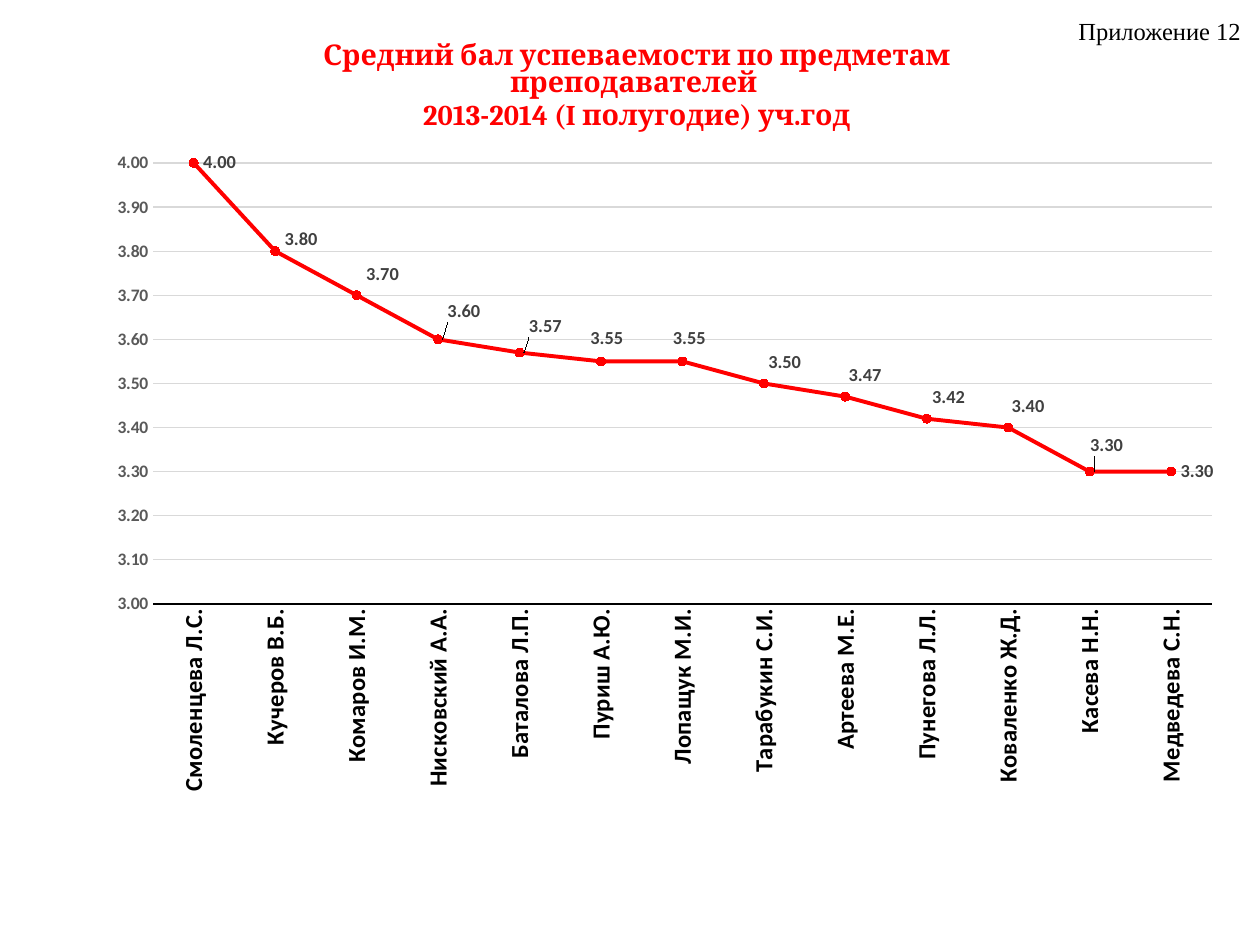
from lxml.etree import SubElement
from pptx import Presentation
from pptx.chart.data import CategoryChartData
from pptx.dml.color import RGBColor
from pptx.enum.chart import XL_CHART_TYPE, XL_LABEL_POSITION, XL_MARKER_STYLE, XL_TICK_MARK
from pptx.enum.dml import MSO_FILL
from pptx.enum.text import MSO_ANCHOR, MSO_AUTO_SIZE, PP_ALIGN
from pptx.oxml import parse_xml
from pptx.oxml.ns import nsdecls, qn
from pptx.util import Emu, Pt

LINE_MARKERS = XL_CHART_TYPE.LINE_MARKERS
RIGHT = XL_LABEL_POSITION.RIGHT
CIRCLE = XL_MARKER_STYLE.CIRCLE
NO_TICK = XL_TICK_MARK.NONE
TOP = MSO_ANCHOR.TOP
CENTER = PP_ALIGN.CENTER
FIT_SHAPE = MSO_AUTO_SIZE.SHAPE_TO_FIT_TEXT
NO_FIT = MSO_AUTO_SIZE.NONE

RED = RGBColor(0xFF, 0x00, 0x00)
BLACK = RGBColor(0x00, 0x00, 0x00)
AXIS_GRAY = RGBColor(0x59, 0x59, 0x59)
LABEL_GRAY = RGBColor(0x40, 0x40, 0x40)
GRID_GRAY = RGBColor(0xD9, 0xD9, 0xD9)

PX_PER_INCH = 126
PAGE_SIZE = (1260, 945)
TITLE_BOX = (203, 37, 862, 102)
NOTE_BOX = (1066, 10, 189, 43)
CHART_BOX = (94, 140, 1142, 665)
PLOT_BOX = (59, 23, 1059, 441)

TITLE_LINES = (
    "Средний бал успеваемости по предметам преподавателей ",
    "2013-2014 (I полугодие) уч.год",
)
GRADES = {
    "Смоленцева Л.С.": 4, "Кучеров В.Б.": 3.8, "Комаров И.М.": 3.7,
    "Нисковский А.А.": 3.6, "Баталова Л.П.": 3.57, "Пуриш А.Ю.": 3.55,
    "Лопащук М.И.": 3.55, "Тарабукин С.И.": 3.5, "Артеева М.Е.": 3.47,
    "Пунегова Л.Л.": 3.42, "Коваленко Ж.Д.": 3.4, "Касева Н.Н.": 3.3,
    "Медведева С.Н.": 3.3,
}
LABEL_SHIFTS = {
    1: (0, -12), 2: (0, -21), 3: (0, -28), 4: (0, -26), 5: (-20, -23), 6: (-19, -23),
    7: (-5, -21), 8: (-6, -21), 9: (-4, -21), 10: (-6, -21), 11: (-9, -26),
}
NUMBER_FORMAT = "0.00"

TITLE_FONT = {"name": "Cambria", "size": Pt(16.3), "bold": True, "color": RED}
NOTE_FONT = {"name": "Times New Roman", "size": Pt(14), "color": BLACK}
CHART_FONT = {"name": "Calibri", "size": Pt(10), "color": BLACK}
CATEGORY_FONT = {"name": "Calibri", "size": Pt(14), "bold": True, "color": BLACK}
VALUE_FONT = {"name": "Calibri", "size": Pt(10), "bold": True, "color": AXIS_GRAY}
LABEL_FONT = {"name": "Calibri", "size": Pt(10.5), "bold": True, "color": LABEL_GRAY}


def px(length):
    """Turn px into EMU."""
    return Emu(round(length * 914400 / PX_PER_INCH))


def set_attributes(target, values):
    """Set each attribute of the target from a dict."""
    for name, value in values.items():
        setattr(target, name, value)


def style_font(font, values):
    """Apply a dict of font values, with its colour."""
    set_attributes(font, {name: value for name, value in values.items() if name != "color"})
    font.color.rgb = values["color"]


def style_line(line, color, width):
    """Give a line a solid colour and a width in points."""
    line.color.rgb = color
    line.width = Pt(width)


def manual_layout(values):
    """Build a chart layout element from its named parts."""
    layout = parse_xml(f"<c:layout {nsdecls('c')}/>")
    manual = SubElement(layout, qn("c:manualLayout"))
    for name, value in values.items():
        SubElement(manual, qn(f"c:{name}")).set("val", str(value))
    return layout


def add_title(page, box):
    """Place the two-paragraph heading in the title placeholder."""
    title = page.shapes.title
    set_attributes(title, dict(zip(("left", "top", "width", "height"), map(px, box))))
    frame = title.text_frame
    set_attributes(frame, {"word_wrap": True, "auto_size": NO_FIT, "vertical_anchor": TOP})
    for index, line in enumerate(TITLE_LINES):
        para = frame.add_paragraph() if index else frame.paragraphs[0]
        set_attributes(para, {"alignment": CENTER, "line_spacing": 0.8,
                              "space_before": Pt(3 if index else 0)})
        para._p.get_or_add_pPr().set("marL", str(px(6)))
        span = para.add_run()
        span.text = line
        style_font(span.font, TITLE_FONT)


def add_note(page, box):
    """Place the appendix number."""
    frame = page.shapes.add_textbox(*map(px, box)).text_frame
    set_attributes(frame, {"word_wrap": False, "auto_size": FIT_SHAPE})
    span = frame.paragraphs[0].add_run()
    span.text = "Приложение 12"
    style_font(span.font, NOTE_FONT)


def style_axes(chart):
    """Format both axes and the gridlines."""
    names, values = chart.category_axis, chart.value_axis
    for axis, font in ((names, CATEGORY_FONT), (values, VALUE_FONT)):
        set_attributes(axis, {"major_tick_mark": NO_TICK, "minor_tick_mark": NO_TICK})
        style_font(axis.tick_labels.font, font)
    style_line(names.format.line, BLACK, 0.75)
    names._element.xpath("c:txPr/a:bodyPr")[0].set("rot", "-5400000")
    set_attributes(values, {"minimum_scale": 3, "maximum_scale": 4, "major_unit": 0.1})
    set_attributes(values.tick_labels,
                   {"number_format": NUMBER_FORMAT, "number_format_is_linked": False})
    values.format.line.fill.background()
    style_line(values.major_gridlines.format.line, GRID_GRAY, 0.75)


def style_labels(series, width, height):
    """Show the values and shift the labels that leave the line."""
    labels = series.data_labels
    set_attributes(labels, {"show_value": True, "position": RIGHT,
                            "number_format": NUMBER_FORMAT, "number_format_is_linked": False})
    style_font(labels.font, LABEL_FONT)
    for index, (across, down) in LABEL_SHIFTS.items():
        label = series.points[index].data_label
        label.position = RIGHT
        style_font(label.font, LABEL_FONT)
    for element in series._element.xpath("c:dLbls/c:dLbl"):
        across, down = LABEL_SHIFTS[int(element.find(qn("c:idx")).get("val"))]
        element.insert(1, manual_layout({"x": round(across / width, 4),
                                         "y": round(down / height, 4)}))
        element.insert(2, parse_xml(
            f'<c:numFmt {nsdecls("c")} formatCode="{NUMBER_FORMAT}" sourceLinked="0"/>'))


def add_grade_chart(page, box):
    """Place the line chart of average grades by teacher."""
    data = CategoryChartData(number_format=NUMBER_FORMAT)
    data.categories = list(GRADES)
    data.add_series("Series 1", list(GRADES.values()))
    chart = page.shapes.add_chart(LINE_MARKERS, *map(px, box), data).chart
    set_attributes(chart, {"has_legend": False, "has_title": False})
    style_font(chart.font, CHART_FONT)
    style_axes(chart)

    plot, series = chart.plots[0], chart.plots[0].series[0]
    plot.vary_by_categories = False
    series.smooth = False
    style_line(series.format.line, RED, 2.25)
    set_attributes(series.marker, {"style": CIRCLE, "size": 5})
    series.marker.format.fill.solid()
    series.marker.format.fill.fore_color.rgb = RED
    style_line(series.marker.format.line, RED, 0.75)

    width, height = box[2:]
    style_labels(series, width, height)
    left, top, plot_width, plot_height = PLOT_BOX
    area = chart._chartSpace.xpath("c:chart/c:plotArea")[0]
    for old in area.xpath("c:layout"):
        area.remove(old)
    area.insert(0, manual_layout({
        "layoutTarget": "inner", "xMode": "edge", "yMode": "edge",
        "x": round(left / width, 4), "y": round(top / height, 4),
        "w": round(plot_width / width, 4), "h": round(plot_height / height, 4)}))


def main():
    """Build the slide and save the deck."""
    deck = Presentation()
    deck.slide_width, deck.slide_height = map(px, PAGE_SIZE)
    page = deck.slides.add_slide(deck.slide_layouts.get_by_name("Title Only"))
    add_grade_chart(page, CHART_BOX)
    add_title(page, TITLE_BOX)
    add_note(page, NOTE_BOX)
    deck.save("out.pptx")


if __name__ == "__main__":
    main()
